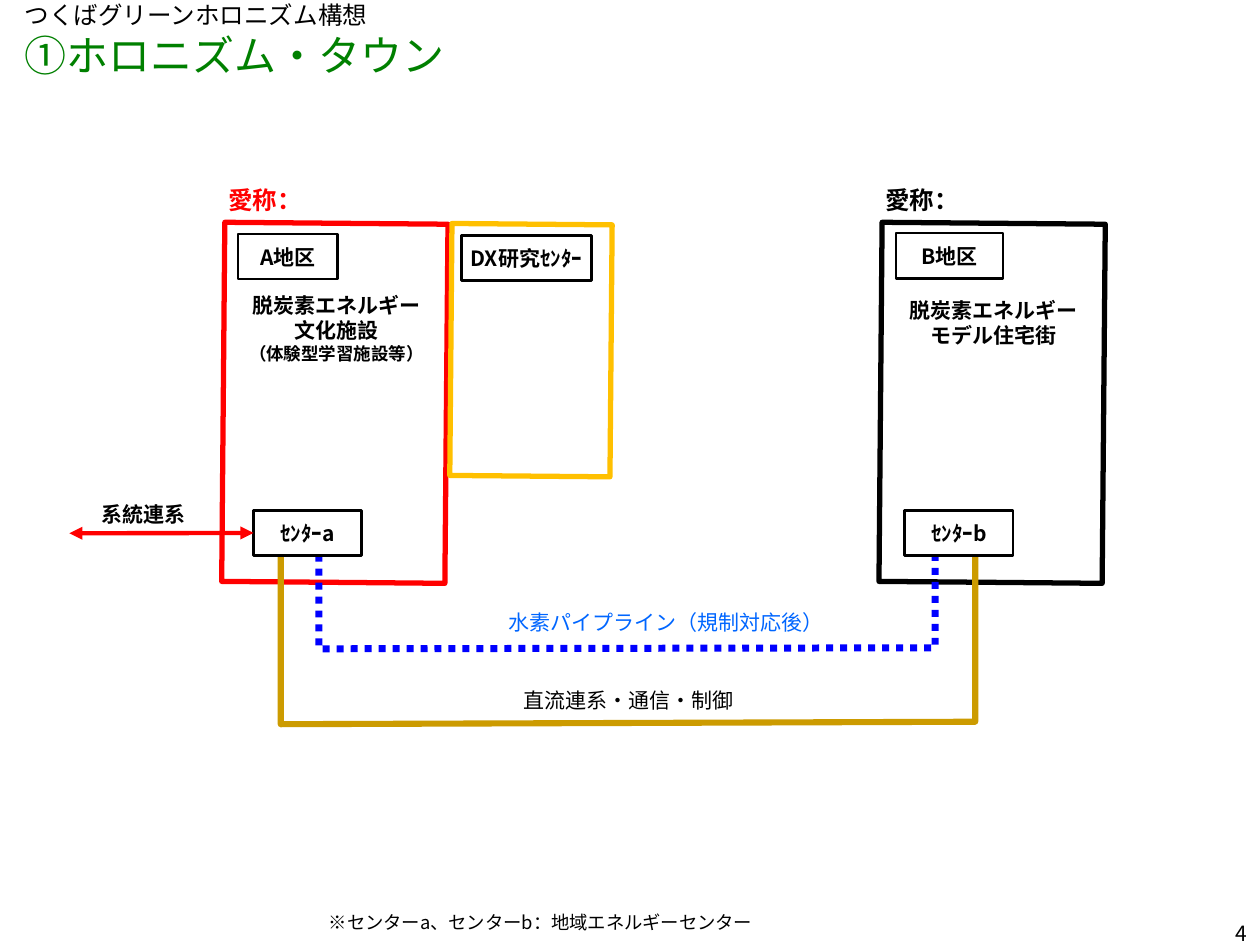
from pptx import Presentation
from pptx.dml.color import RGBColor
from pptx.enum.dml import MSO_LINE as Dash
from pptx.enum.shapes import MSO_CONNECTOR as Conn, MSO_SHAPE as Kind
from pptx.enum.text import MSO_ANCHOR as Anchor, PP_ALIGN as Align
from pptx.oxml.ns import qn
from pptx.util import Cm, Pt
from lxml.etree import SubElement as Sub

FONT = "Noto Sans CJK JP"
BLACK = RGBColor(0, 0, 0)
WHITE = RGBColor(255, 255, 255)
RED = RGBColor(255, 0, 0)
GREEN = RGBColor(0, 0x80, 0)
AMBER = RGBColor(0xFF, 0xC0, 0)
GOLD = RGBColor(0xCC, 0x9B, 0)
BLUE = RGBColor(0, 0, 255)
SKY = RGBColor(0, 0x66, 255)

PAD = (0.25, 0.13)
NONE = (0, 0)


def write(frame, rows, pad=PAD, align=Align.LEFT, anchor=Anchor.TOP):
    """Fill a frame with rows of (text, size, bold, colour)."""
    side, edge = map(Cm, pad)
    form = {"word_wrap": True, "vertical_anchor": anchor,
            "margin_left": side, "margin_right": side,
            "margin_top": edge, "margin_bottom": edge}
    for key, val in form.items():
        setattr(frame, key, val)
    for i, (text, size, bold, color) in enumerate(rows):
        para = frame.add_paragraph() if i else frame.paragraphs[0]
        para.alignment = align
        run = para.add_run()
        run.text = text
        for key, val in {"name": FONT, "size": Pt(size), "bold": bold}.items():
            setattr(run.font, key, val)
        run.font.color.rgb = color
        Sub(run.font._element, qn("a:ea"), typeface=FONT)


def label(slide, at, rows, **form):
    box = slide.shapes.add_textbox(*map(Cm, at))
    write(box.text_frame, rows, **form)


def stroke(item, color, width):
    item.line.color.rgb = color
    item.line.width = Pt(width)


def frame(slide, at, color, width=3, turn=0.5):
    """Add an outlined rectangle without fill."""
    box = slide.shapes.add_shape(Kind.RECTANGLE, *map(Cm, at))
    box.shadow.inherit = False
    box.fill.background()
    box.rotation = turn
    stroke(box, color, width)
    return box


def tag(slide, at, text, pad=(0, 0.2), fill=None):
    """Add a small named box."""
    box = frame(slide, at, BLACK, 1.5, 0)
    if fill is not None:
        box.fill.solid()
        box.fill.fore_color.rgb = fill
    write(box.text_frame, [(text, 12, True, BLACK)], pad,
          Align.CENTER, Anchor.MIDDLE)
    return box


def pipe(slide, dots, color, width, dash=None):
    """Add an open line through the given points."""
    first, *rest = [(Cm(x), Cm(y)) for x, y in dots]
    pen = slide.shapes.build_freeform(*first)
    pen.add_line_segments(rest, close=False)
    line = pen.convert_to_shape()
    line.shadow.inherit = False
    line.fill.background()
    stroke(line, color, width)
    line.line.dash_style = dash


def arrow(slide, x, y, box):
    """Add a two-headed arrow that ends at the left side of a box."""
    line = slide.shapes.add_connector(Conn.STRAIGHT, Cm(x), Cm(y), box.left, Cm(y))
    line.end_connect(box, 1)
    stroke(line, RED, 2.5)
    for end in ("a:headEnd", "a:tailEnd"):
        Sub(line.line._get_or_add_ln(), qn(end), type="triangle")
    Sub(line._element.spPr, qn("a:effectLst"))


def main():
    deck = Presentation()
    deck.slide_width, deck.slide_height = Cm(25.4), Cm(19.05)
    slide = deck.slides.add_slide(deck.slide_layouts[6])
    mid = {"align": Align.CENTER}
    bare = {"pad": NONE, **mid}

    # Title, page number and note
    label(slide, (0.25, -0.13, 24.89, 1.88),
          [("つくばグリーンホロニズム構想", 14, False, BLACK),
           ("①ホロニズム・タウン", 24, False, GREEN)])
    label(slide, (19.69, 18.31, 5.71, 1.02), [("4", 12, False, BLACK)],
          align=Align.RIGHT, anchor=Anchor.MIDDLE)
    label(slide, (6.38, 18.24, 13.08, 0.71),
          [("※センターa、センターb：地域エネルギーセンター", 10.5, False, BLACK)])

    # Districts and research centre
    for x, color in ((4.5, RED), (17.75, BLACK)):
        frame(slide, (x, 4.5, 4.5, 7.24), color)
        label(slide, (x + 0.1, 3.73, 4.6, 0.86),
              [("愛称：", 14, True, color)], pad=NONE)
    frame(slide, (9.09, 4.52, 3.23, 5.08), AMBER)
    tag(slide, (4.8, 4.72, 2.01, 0.91), "A地区")
    tag(slide, (18.06, 4.7, 2.16, 0.91), "B地区")
    tag(slide, (9.3, 4.75, 2.62, 0.91), "DX研究ｾﾝﾀｰ")
    label(slide, (4.57, 5.89, 4.42, 2.11),
          [("脱炭素エネルギー", 12, True, BLACK),
           ("文化施設", 12, True, BLACK),
           ("（体験型学習施設等）", 10, True, BLACK)], **bare)
    label(slide, (17.78, 5.87, 4.5, 1.85),
          [("脱炭素エネルギー", 12, True, BLACK),
           ("モデル住宅街", 12, True, BLACK)], **mid)

    # Links between the districts
    pipe(slide, [(5.66, 11.23), (5.66, 14.6), (19.66, 14.55), (19.66, 11.18)],
         GOLD, 3.5)
    pipe(slide, [(6.43, 11.18), (6.43, 13.08), (18.85, 13.06), (18.85, 11.15)],
         BLUE, 4, Dash.ROUND_DOT)

    # Energy centres and the grid link
    west, _ = [tag(slide, (x, 10.29, 2.18, 0.91), text, (0.25, 0.2), WHITE)
               for x, text in ((5.11, "ｾﾝﾀｰa"), (18.24, "ｾﾝﾀｰb"))]
    arrow(slide, 1.4, 10.75, west)

    # Link names
    for at, text, bold, color in (
            ((10.11, 12.29, 6.63, 0.51), "水素パイプライン（規制対応後）", False, SKY),
            ((10.29, 13.87, 4.75, 0.51), "直流連系・通信・制御", False, BLACK),
            ((1.68, 10.11, 2.41, 0.51), "系統連系", True, BLACK)):
        label(slide, at, [(text, 12, bold, color)], **bare)

    deck.save("out.pptx")


if __name__ == "__main__":
    main()
